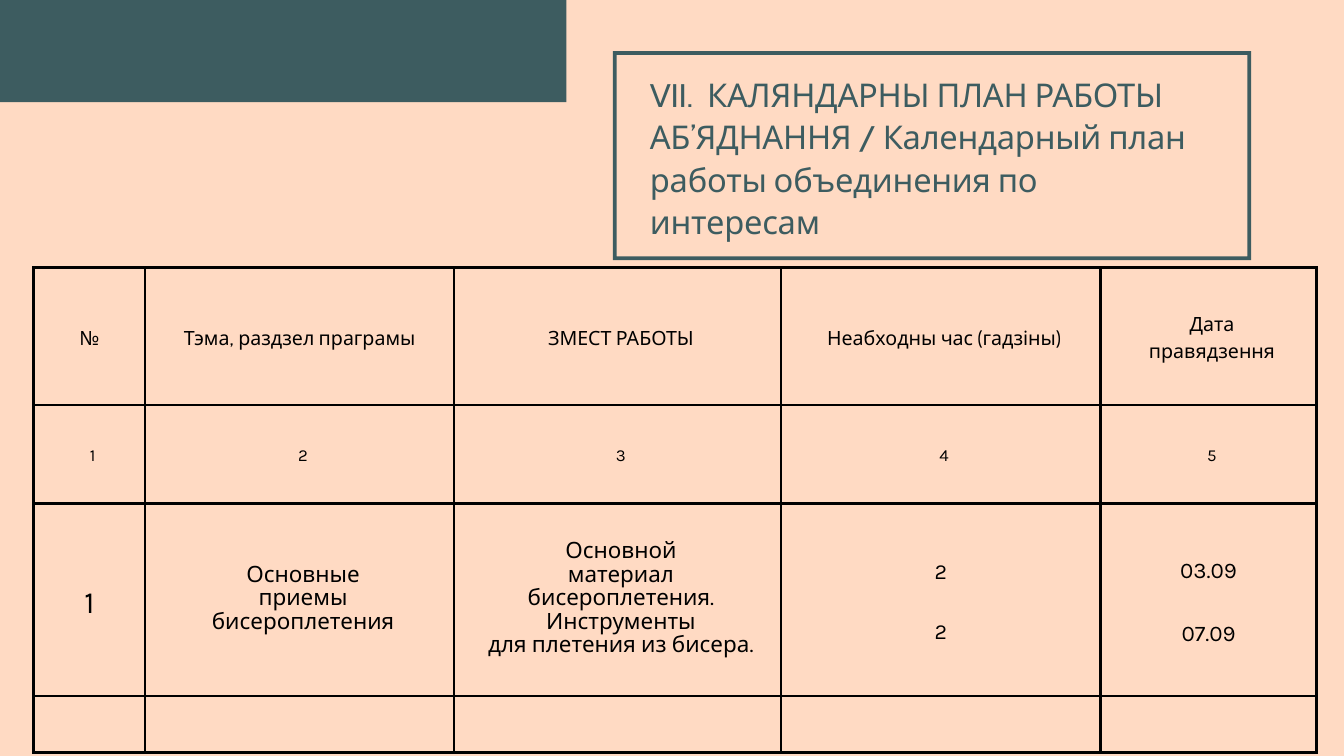
from lxml.etree import SubElement
from pptx import Presentation
from pptx.dml.color import RGBColor
from pptx.enum.shapes import MSO_SHAPE as SHAPE
from pptx.enum.text import MSO_ANCHOR as ANCHOR, MSO_AUTO_SIZE as AUTO, PP_ALIGN as ALIGN
from pptx.oxml.ns import qn
from pptx.util import Inches, Pt

PEACH = RGBColor(0xFF, 0xDA, 0xC3)
TEAL = RGBColor(0x3D, 0x5C, 0x60)
BLACK = RGBColor(0, 0, 0)

# Content
TITLE = ("VII.  КАЛЯНДАРНЫ ПЛАН РАБОТЫ АБ’ЯДНАННЯ / "
         "Календарный план работы объединения по интересам")

# Style: font, size, line spacing, space between paragraphs, left indent
STYLES = {
    "head": ("Cabin", 21, 29.4, 0, 0),
    "head_in": ("Cabin", 21, 29.4, 0, 0.1),
    "index": ("Karla", 18, 25.2, 0, 0.1),
    "number": ("Karla", 33, 46.2, 0, 0),
    "topic": ("Karla", 24, 25.2, 0, 0.1),
    "hours": ("Karla", 23, 32.2, 32.2, 0),
    "date": ("Karla", 24, 33.6, 33.6, 0),
}
ROWS = [
    [("head", ["№"]),
     ("head", ["Тэма, раздзел праграмы"]),
     ("head_in", ["ЗМЕСТ РАБОТЫ"]),
     ("head_in", ["Неабходны час (гадзіны)"]),
     ("head_in", ["Дата", "правядзення"])],
    [("index", [str(n)]) for n in range(1, 6)],
    [("number", ["1"]),
     ("topic", ["Основные", "приемы бисероплетения"]),
     ("topic", ["Основной", "материал бисероплетения.", "Инструменты",
                "для плетения из бисера."]),
     ("hours", ["2", "2"]),
     ("date", ["03.09", "07.09"])],
    [],
]
COL_WIDTHS = [1.66, 4.6, 4.86, 4.76, 3.21]
ROW_HEIGHTS = [2.05, 1.46, 2.87, 0.84]


def apply(obj, values):
    for name, value in values.items():
        setattr(obj, name, value)


def add_block(s, kind, *box):
    sp = s.shapes.add_shape(kind, *map(Inches, box))
    sp.shadow.inherit = False
    sp.fill.solid()
    sp.fill.fore_color.rgb = TEAL
    sp.line.fill.background()
    return sp


def add_borders(cell, width=3):
    tcPr = cell._tc.get_or_add_tcPr()
    for i, side in enumerate(("a:lnL", "a:lnR", "a:lnT", "a:lnB")):
        ln = tcPr.makeelement(qn(side), {"w": str(Pt(width))})
        fill = SubElement(ln, qn("a:solidFill"))
        SubElement(fill, qn("a:srgbClr"), val=str(BLACK))
        tcPr.insert(i, ln)


def write_cell(cell, style, lines):
    font, size, leading, gap, indent = STYLES[style]
    tf = cell.text_frame
    for i, line in enumerate(lines):
        p = tf.paragraphs[0] if i == 0 else tf.add_paragraph()
        apply(p, {"alignment": ALIGN.CENTER, "line_spacing": Pt(leading),
                  "space_before": Pt(gap if i else 0)})
        if indent:
            p._p.get_or_add_pPr().set("marL", str(Inches(indent)))
        r = p.add_run()
        r.text = line
        apply(r.font, {"name": font, "size": Pt(size)})
        r.font.color.rgb = BLACK


def main():
    prs = Presentation()
    apply(prs, {"slide_width": Inches(20), "slide_height": Inches(11.25)})
    s = prs.slides.add_slide(prs.slide_layouts[5])
    s.background.fill.solid()
    s.background.fill.fore_color.rgb = PEACH

    # Corner band and title frame
    add_block(s, SHAPE.RECTANGLE, -0.17, 0, 8.6, 1.52)
    frame = add_block(s, SHAPE.FRAME, 9.12, 0.76, 9.5, 3.11)
    frame.adjustments[0] = 0.018

    # Title
    title = s.shapes.title
    apply(title, {"left": Inches(9.67), "top": Inches(1.06),
                  "width": Inches(8.35), "height": Inches(2.48)})
    tf = title.text_frame
    apply(tf, {"word_wrap": True, "auto_size": AUTO.SHAPE_TO_FIT_TEXT,
               "vertical_anchor": ANCHOR.TOP, "margin_left": 0,
               "margin_right": 0, "margin_top": 0, "margin_bottom": 0})
    p = tf.paragraphs[0]
    apply(p, {"alignment": ALIGN.LEFT, "line_spacing": Pt(45.5), "space_before": Pt(0)})
    r = p.add_run()
    r.text = TITLE
    apply(r.font, {"name": "Cabin", "size": Pt(35)})
    r.font.color.rgb = TEAL
    r.font._element.set("spc", "-30")

    # Calendar plan table
    plan = s.shapes.add_table(
        len(ROW_HEIGHTS), len(COL_WIDTHS), Inches(0.5), Inches(3.98),
        Inches(sum(COL_WIDTHS)), Inches(sum(ROW_HEIGHTS))).table
    apply(plan, {"first_row": False, "horz_banding": False})
    for col, width in zip(plan.columns, COL_WIDTHS):
        col.width = Inches(width)
    for row, height, content in zip(plan.rows, ROW_HEIGHTS, ROWS):
        row.height = Inches(height)
        for cell in row.cells:
            apply(cell, {"vertical_anchor": ANCHOR.MIDDLE,
                         "margin_left": Inches(0.21), "margin_right": Inches(0.21),
                         "margin_top": Inches(0.21), "margin_bottom": Inches(0.21)})
            cell.fill.background()
            add_borders(cell)
        for cell, (style, lines) in zip(row.cells, content):
            write_cell(cell, style, lines)

    prs.save("out.pptx")


if __name__ == "__main__":
    main()
